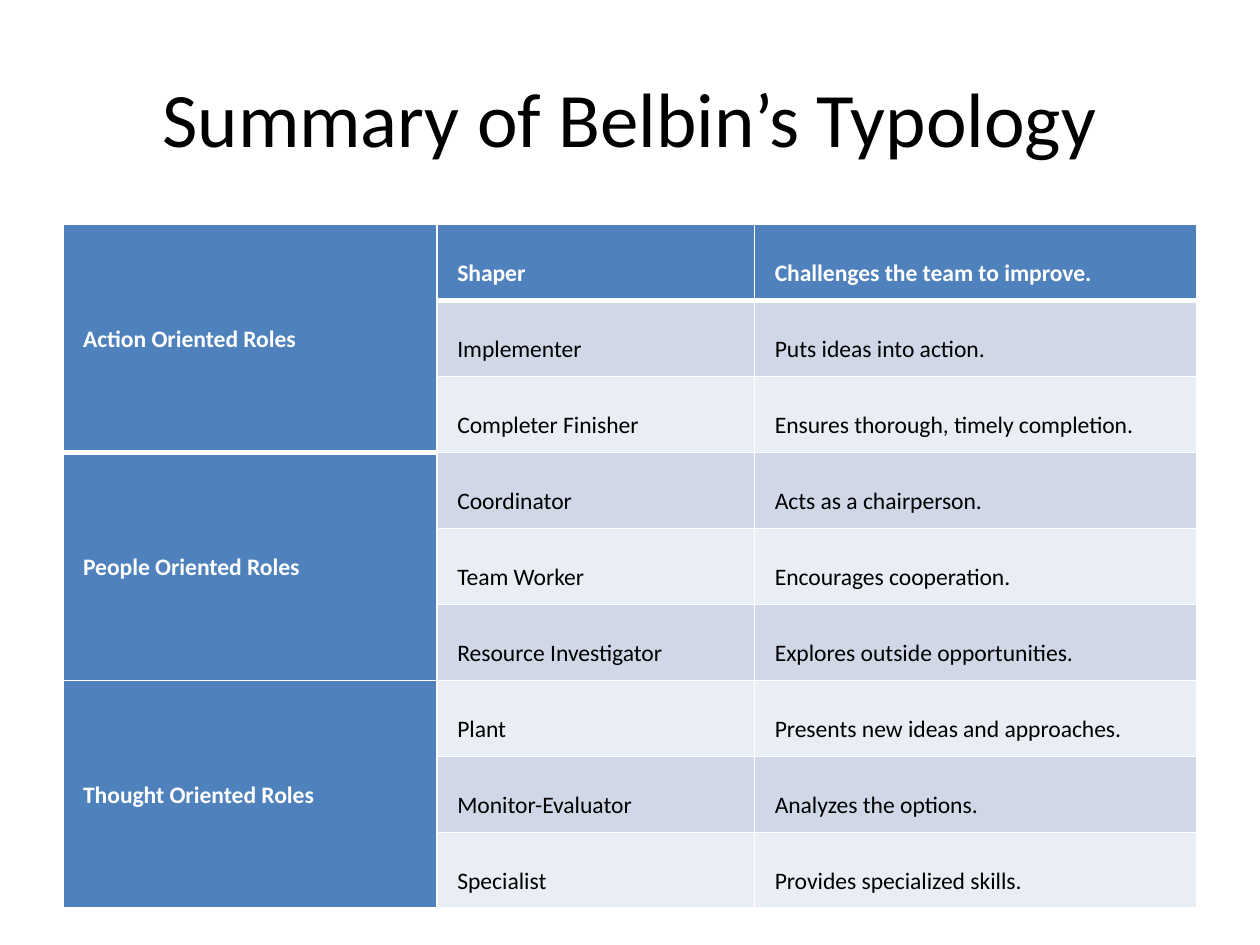
import pptx
import pptx.util
import pptx.dml.color
import pptx.enum.text
import pptx.oxml.ns
import lxml.etree

Inches = pptx.util.Inches
Pt = pptx.util.Pt
Anchor = pptx.enum.text.MSO_ANCHOR

COLORS = {"blue": "4F81BD", "dark": "D0D8E8", "light": "E9EDF4",
          "white": "FFFFFF", "black": "000000"}

GROUPS = [
    ("Action Oriented Roles", [
        ("Shaper", "Challenges the team to improve."),
        ("Implementer", "Puts ideas into action."),
        ("Completer Finisher", "Ensures thorough, timely completion.")]),
    ("People Oriented Roles", [
        ("Coordinator", "Acts as a chairperson."),
        ("Team Worker", "Encourages cooperation."),
        ("Resource Investigator", "Explores outside opportunities.")]),
    ("Thought Oriented Roles", [
        ("Plant", "Presents new ideas and approaches."),
        ("Monitor-Evaluator", "Analyzes the options."),
        ("Specialist", "Provides specialized skills.")]),
]
WIDTHS = [2.97, 2.52, 3.51]


def color(name):
    """Return the named color as RGB."""
    return pptx.dml.color.RGBColor.from_string(COLORS[name])


def write(frame, text, size, ink, bold=False):
    """Put one styled paragraph in a text frame and return it."""
    para = frame.paragraphs[0]
    para.text = text
    font = para.runs[0].font
    font.name, font.size, font.bold = "Calibri", Pt(size), bold
    font.color.rgb = color(ink)
    return para


def edge(cell, top, bottom):
    """Draw white borders with the given top and bottom widths."""
    props = cell._tc.get_or_add_tcPr()
    qn = pptx.oxml.ns.qn
    for side, width in zip("LRTB", (1, 1, top, bottom)):
        line = lxml.etree.SubElement(props, qn(f"a:ln{side}"), w=str(Pt(width)))
        fill = lxml.etree.SubElement(line, qn("a:solidFill"))
        lxml.etree.SubElement(fill, qn("a:srgbClr"), val=COLORS["white"])


def style(cell, shade, pad, anchor, top=1, bottom=1):
    """Set the borders, fill, margins and anchor of a cell."""
    edge(cell, top, bottom)
    cell.fill.solid()
    cell.fill.fore_color.rgb = color(shade)
    cell.margin_left = cell.margin_right = Inches(0.16)
    cell.margin_top = cell.margin_bottom = Inches(pad)
    cell.vertical_anchor = anchor


def add_title(slide, left, top, width, height):
    """Place the centered heading in its box."""
    box = slide.shapes.add_textbox(Inches(left), Inches(top),
                                   Inches(width), Inches(height))
    frame = box.text_frame
    frame.word_wrap = True
    frame.vertical_anchor = Anchor.MIDDLE
    para = write(frame, "Summary of Belbin’s Typology", 44, "black")
    para.alignment = pptx.enum.text.PP_ALIGN.CENTER


def add_roles(slide, left, top, width, height):
    """Place the table of roles, one merged cell per group."""
    span = len(GROUPS[0][1])
    count = span * len(GROUPS)
    table = slide.shapes.add_table(count, len(WIDTHS), Inches(left), Inches(top),
                                   Inches(width), Inches(height)).table
    table.first_row = table.horz_banding = False
    for col, size in zip(table.columns, WIDTHS):
        col.width = Inches(width * size / sum(WIDTHS))
    for row in table.rows:
        row.height = Inches(height / count)

    for group, (label, roles) in enumerate(GROUPS):
        first = group * span
        for row, texts in enumerate(roles, first):
            style(table.cell(row, 0), "blue", 0.16, Anchor.MIDDLE,
                  top=3 if row == span else 1, bottom=3 if row < span else 1)
            head = row == 0
            shade = "blue" if head else "dark" if row % 2 else "light"
            for col, text in enumerate(texts, 1):
                cell = table.cell(row, col)
                style(cell, shade, 0.1, Anchor.BOTTOM,
                      top=3 if row == 1 else 1, bottom=3 if head else 1)
                para = write(cell.text_frame, text, 13.5,
                             "white" if head else "black", head)
                para.line_spacing = Pt(15)
        cell = table.cell(first, 0)
        cell.merge(table.cell(first + span - 1, 0))
        write(cell.text_frame, label, 13.5, "white", True).line_spacing = 1.07


def main():
    """Build and save the slide."""
    deck = pptx.Presentation()
    deck.slide_width, deck.slide_height = Inches(10), Inches(7.5)
    slide = deck.slides.add_slide(deck.slide_layouts[6])
    add_title(slide, 0.5, 0.3, 9, 1.25)
    add_roles(slide, 0.5, 1.78, 9, 5.43)
    deck.save("out.pptx")


if __name__ == "__main__":
    main()
